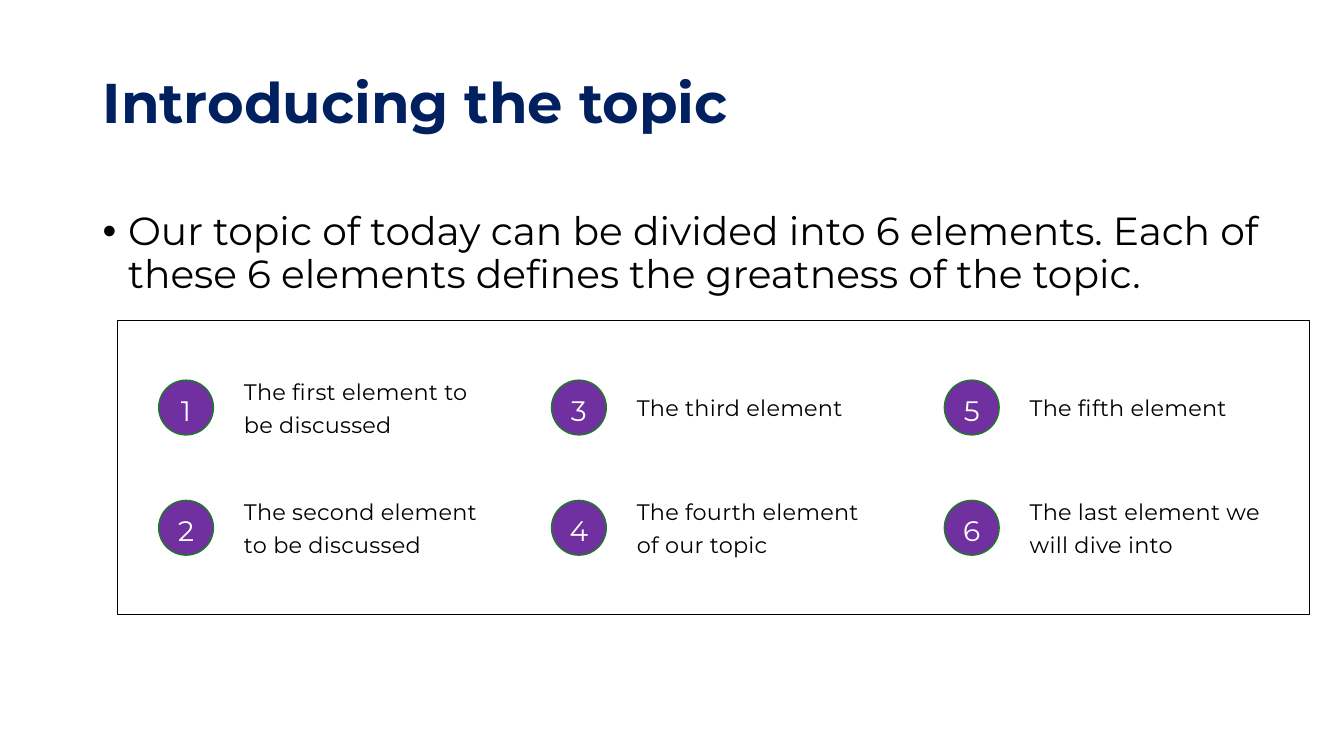
from lxml.etree import SubElement as Sub
from pptx import Presentation
from pptx.dml.color import RGBColor
from pptx.enum.shapes import MSO_SHAPE as Shape
from pptx.enum.text import MSO_ANCHOR as Anchor, PP_ALIGN as Align
from pptx.oxml.ns import qn
from pptx.util import Cm, Pt

NAVY, BLACK, WHITE = "002060", "000000", "FFFFFF"
PURPLE, GREEN = "7030A0", "1E7B25"


def color(code):
    return RGBColor.from_string(code)


class Page:
    font = "Montserrat"

    def __init__(self, slide):
        self.shapes = slide.shapes

    def put(self, shape, text, size, ink, lead, pad=(0, 0), bold=False):
        frame = shape.text_frame
        frame.word_wrap = True
        frame.vertical_anchor = Anchor.MIDDLE
        frame.margin_left = frame.margin_right = Cm(pad[0])
        frame.margin_top = frame.margin_bottom = Cm(pad[1])
        frame.text = text
        para = frame.paragraphs[0]
        para.line_spacing = lead
        run = para.runs[0]
        run.font.name = self.font
        run.font.size = Pt(size)
        run.font.bold = bold
        run.font.color.rgb = color(ink)
        return para

    def box(self, x, y, w, h):
        return self.shapes.add_textbox(Cm(x), Cm(y), Cm(w), Cm(h))

    def draw(self, kind, x, y, w, h, edge, width, fill=None):
        shape = self.shapes.add_shape(kind, Cm(x), Cm(y), Cm(w), Cm(h))
        shape.shadow.inherit = False
        if fill:
            shape.fill.solid()
            shape.fill.fore_color.rgb = color(fill)
        else:
            shape.fill.background()
        shape.line.color.rgb = color(edge)
        shape.line.width = Pt(width)
        return shape

    def title(self, text):
        box = self.box(2.34, 1.27, 30.12, 2.79)
        self.put(box, text, 40, NAVY, 0.9, (0.25, 0.13), True)

    def bullet(self, text):
        box = self.box(2.34, 5.21, 30.12, 9.75)
        para = self.put(box, text, 28, BLACK, 0.9, (0.25, 0.13))
        box.text_frame.vertical_anchor = Anchor.TOP
        props = para._p.get_or_add_pPr()
        props.set("marL", str(Cm(0.64)))
        props.set("indent", str(-Cm(0.64)))
        Sub(props, qn("a:buFont")).set("typeface", "Arial")
        Sub(props, qn("a:buChar")).set("char", "•")

    def panel(self):
        self.draw(Shape.RECTANGLE, 2.96, 8.07, 30.04, 7.41, BLACK, 0.5)

    def badge(self, x, y, num):
        disc = self.draw(Shape.OVAL, x, y, 1.38, 1.38, GREEN, 1, PURPLE)
        para = self.put(disc, str(num), 20.1, WHITE, Pt(28.1))
        para.alignment = Align.CENTER

    def label(self, x, y, text):
        box = self.box(x, y, 6, 1.62)
        para = self.put(box, text, 16, BLACK, Pt(23.3))
        para.runs[0]._r.get_or_add_rPr().set("spc", "20")


def main():
    deck = Presentation()
    deck.slide_width, deck.slide_height = Cm(33.87), Cm(19.05)
    page = Page(deck.slides.add_slide(deck.slide_layouts[6]))
    page.title("Introducing the topic")
    page.bullet("Our topic of today can be divided into 6 elements. "
                "Each of these 6 elements defines the greatness of the topic.")
    page.panel()
    items = [
        "The first element to be discussed",
        "The second element to be discussed",
        "The third element",
        "The fourth element of our topic",
        "The fifth element",
        "The last element we will dive into",
    ]
    for i, item in enumerate(items):
        col, row = divmod(i, 2)
        x, y = 4 + 9.9 * col, 9.58 + 3.03 * row
        page.badge(x, y, i + 1)
        page.label(x + 2.15, y - 0.18, item)
    deck.save("out.pptx")


if __name__ == "__main__":
    main()
